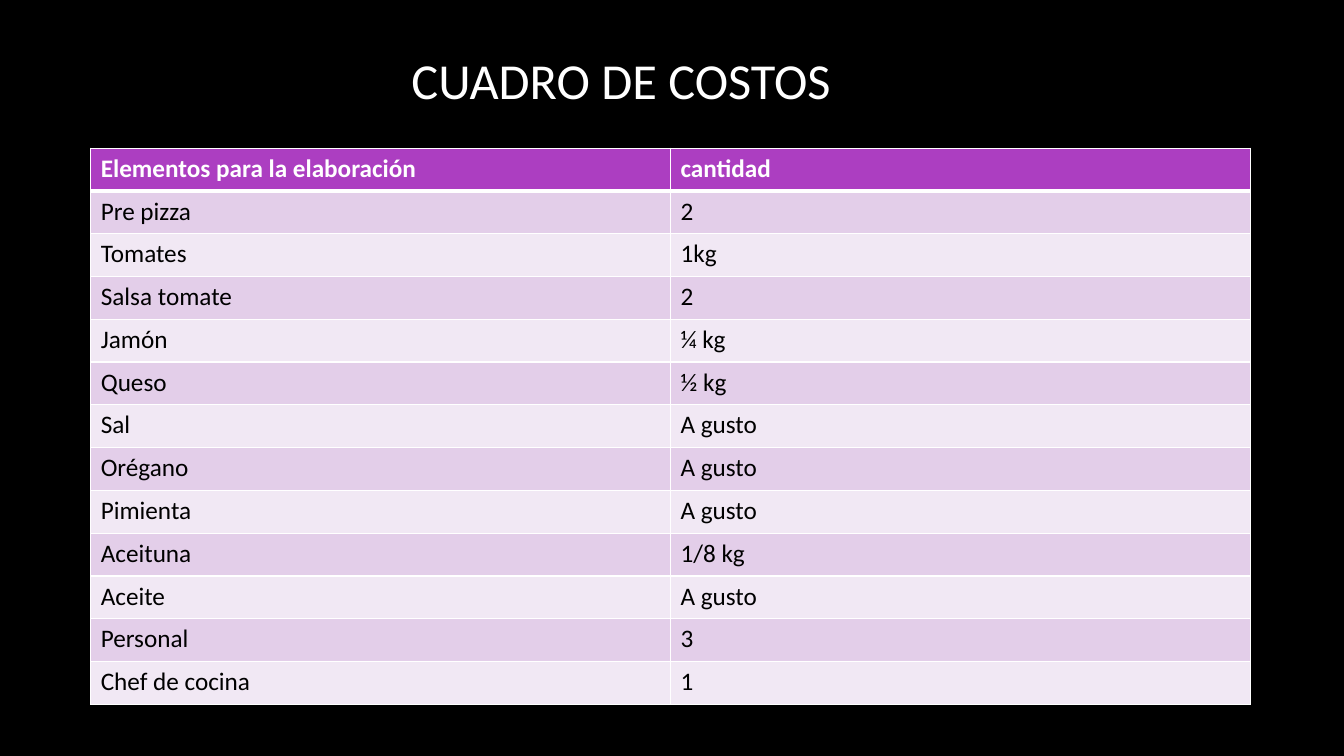
from lxml import etree
from pptx import Presentation
from pptx.dml.color import RGBColor
from pptx.enum.text import MSO_ANCHOR, PP_ALIGN
from pptx.oxml.ns import qn
from pptx.util import Inches, Pt

# Content
TITLE = "CUADRO DE COSTOS"
ROWS = [
    ("Elementos para la elaboración", "cantidad"),
    ("Pre pizza", "2"),
    ("Tomates", "1kg"),
    ("Salsa tomate", "2"),
    ("Jamón", "¼ kg"),
    ("Queso", "½ kg"),
    ("Sal", "A gusto"),
    ("Orégano", "A gusto"),
    ("Pimienta", "A gusto"),
    ("Aceituna", "1/8 kg"),
    ("Aceite", "A gusto"),
    ("Personal", "3"),
    ("Chef de cocina", "1"),
]

FONT = "Calibri"
BLACK, WHITE = "000000", "FFFFFF"
HEADER_FILL = "AC3EC1"
BAND_FILLS = ("F1E8F4", "E3CEE9")  # even rows, odd rows
TABLE_W, TABLE_H = 11.5, 5.52


def rgb(value):
    return RGBColor.from_string(value)


def set_font(p, size, color, bold=False):
    p.font.name = FONT
    p.font.size = Pt(size)
    p.font.bold = bold
    p.font.color.rgb = rgb(color)


def add_border(cell, side, width):
    tc_pr = cell._tc.get_or_add_tcPr()
    ln = etree.SubElement(tc_pr, qn(f"a:ln{side}"), w=str(Pt(width)))
    fill = etree.SubElement(ln, qn("a:solidFill"))
    etree.SubElement(fill, qn("a:srgbClr"), val=WHITE)


prs = Presentation()
prs.slide_width, prs.slide_height = Inches(13.33), Inches(7.5)
s = prs.slides.add_slide(prs.slide_layouts[5])
s.background.fill.solid()
s.background.fill.fore_color.rgb = rgb(BLACK)

# Title
title = s.shapes.title
title.left, title.top = Inches(0.62), Inches(0.3)
title.width, title.height = Inches(11.08), Inches(0.97)
tf = title.text_frame
tf.text = TITLE
tf.vertical_anchor = MSO_ANCHOR.MIDDLE
p = tf.paragraphs[0]
p.alignment = PP_ALIGN.CENTER
set_font(p, 36, WHITE)

# Cost table
table = s.shapes.add_table(
    len(ROWS), len(ROWS[0]), Inches(0.9), Inches(1.47),
    Inches(TABLE_W), Inches(TABLE_H)).table
for col in table.columns:
    col.width = Inches(TABLE_W / len(ROWS[0]))

for i, texts in enumerate(ROWS):
    table.rows[i].height = Inches(TABLE_H / len(ROWS))
    header = i == 0
    for j, text in enumerate(texts):
        cell = table.cell(i, j)
        cell.text = text
        set_font(cell.text_frame.paragraphs[0], 18,
                 WHITE if header else BLACK, header)
        # A thick rule separates the header from the first row
        for side in "LRTB":
            thick = (i, side) in ((0, "B"), (1, "T"))
            add_border(cell, side, 3 if thick else 1)
        cell.fill.solid()
        cell.fill.fore_color.rgb = rgb(HEADER_FILL if header else BAND_FILLS[i % 2])

prs.save("out.pptx")
